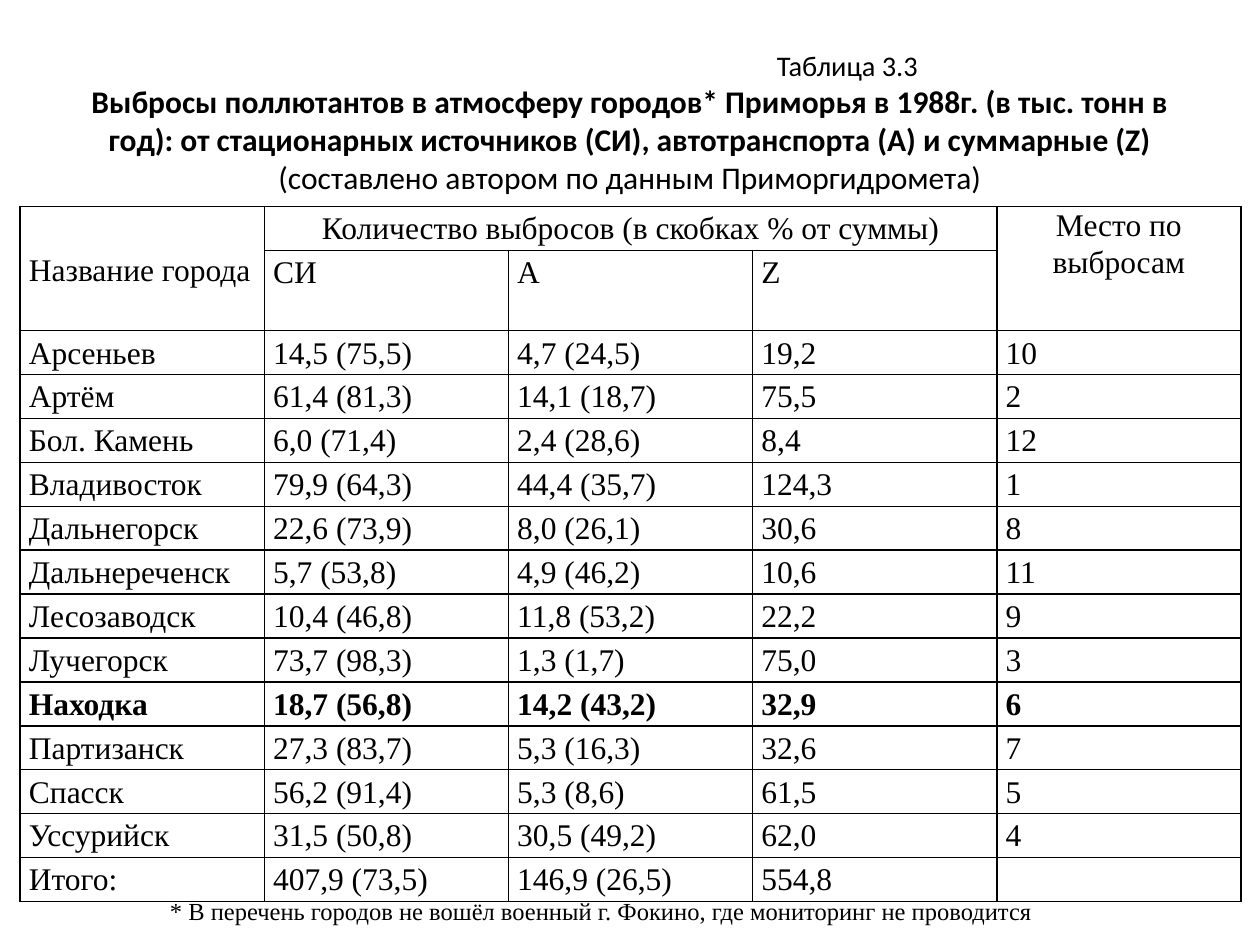
from dataclasses import dataclass

from lxml import etree
from pptx import Presentation
from pptx.dml.color import RGBColor
from pptx.enum.text import MSO_ANCHOR, PP_ALIGN
from pptx.oxml.ns import qn
from pptx.util import Emu, Inches, Pt

CENTER, JUSTIFY = PP_ALIGN.CENTER, PP_ALIGN.JUSTIFY
TOP, MIDDLE = MSO_ANCHOR.TOP, MSO_ANCHOR.MIDDLE
COLORS = {"ink": "000000"}
SANS, SERIF = "Calibri", "Times New Roman"
TABLE_LEFT, TABLE_TOP = 0.16, 1.64
TABLE_WIDTH, TABLE_HEIGHT = 9.69, 5.23
BORDER_WIDTH = Pt(1)


@dataclass
class Line:
    text: str
    size: float
    font: str
    bold: bool = False
    align: PP_ALIGN = CENTER
    margin: float = 0
    indent: float = 0


@dataclass
class Block:
    left: float
    top: float
    width: float
    height: float
    anchor: MSO_ANCHOR
    inset: float
    lines: list[Line]


@dataclass
class Heading:
    text: str
    row: int
    column: int
    rows: int = 1
    columns: int = 1
    align: PP_ALIGN = JUSTIFY
    anchor: MSO_ANCHOR = TOP
    spacing: float = 1.15


TITLE = Block(0.5, 0.3, 9, 1.25, TOP, 0.08, [
    Line("Таблица 3.3", 16.2, SANS, margin=3.45),
    Line("Выбросы поллютантов в атмосферу городов* Приморья в 1988г. "
         "(в тыс. тонн в год): от стационарных источников (СИ), "
         "автотранспорта (А) и суммарные (Z)", 18, SANS, bold=True),
    Line("(составлено автором по данным Приморгидромета)", 18, SANS),
])
FOOTNOTE = Block(0.7, 7.04, 8.52, 0.37, MIDDLE, 0.05, [
    Line("* В перечень городов не вошёл военный г. Фокино, "
         "где мониторинг не проводится", 14, SERIF, align=JUSTIFY, indent=0.55),
])

HEADINGS = [
    Heading("Название города", 0, 0, rows=2, anchor=MIDDLE),
    Heading("Количество выбросов (в скобках % от суммы)", 0, 1, columns=3, align=CENTER),
    Heading("Место по выбросам", 0, 4, rows=2, align=CENTER, spacing=1.06),
    Heading("СИ", 1, 1),
    Heading("А", 1, 2),
    Heading("Z", 1, 3),
]

CITIES = [
    ("Арсеньев", "14,5 (75,5)", "4,7 (24,5)", "19,2", "10"),
    ("Артём", "61,4 (81,3)", "14,1 (18,7)", "75,5", "2"),
    ("Бол. Камень", "6,0 (71,4)", "2,4 (28,6)", "8,4", "12"),
    ("Владивосток", "79,9 (64,3)", "44,4 (35,7)", "124,3", "1"),
    ("Дальнегорск", "22,6 (73,9)", "8,0 (26,1)", "30,6", "8"),
    ("Дальнереченск", "5,7 (53,8)", "4,9 (46,2)", "10,6", "11"),
    ("Лесозаводск", "10,4 (46,8)", "11,8 (53,2)", "22,2", "9"),
    ("Лучегорск", "73,7 (98,3)", "1,3 (1,7)", "75,0", "3"),
    ("Находка", "18,7 (56,8)", "14,2 (43,2)", "32,9", "6"),
    ("Партизанск", "27,3 (83,7)", "5,3 (16,3)", "32,6", "7"),
    ("Спасск", "56,2 (91,4)", "5,3 (8,6)", "61,5", "5"),
    ("Уссурийск", "31,5 (50,8)", "30,5 (49,2)", "62,0", "4"),
    ("Итого:", "407,9 (73,5)", "146,9 (26,5)", "554,8"),
]
HIGHLIGHTED_CITY = "Находка"
HEADING_ROWS = 2


def write_line(para, line: Line) -> None:
    para.alignment = line.align
    if line.margin or line.indent:
        properties = para._p.get_or_add_pPr()
        properties.set("marL", str(Inches(line.margin)))
        properties.set("indent", str(Inches(line.indent)))
    span = para.add_run()
    span.text = line.text
    span.font.name = line.font
    span.font.size = Pt(line.size)
    span.font.bold = line.bold
    span.font.color.rgb = RGBColor.from_string(COLORS["ink"])


def draw_block(page, block: Block) -> None:
    box = page.shapes.add_textbox(Inches(block.left), Inches(block.top),
                                  Inches(block.width), Inches(block.height))
    frame = box.text_frame
    frame.word_wrap = True
    frame.vertical_anchor = block.anchor
    frame.margin_top = frame.margin_bottom = Inches(block.inset)
    for index, line in enumerate(block.lines):
        para = frame.add_paragraph() if index else frame.paragraphs[0]
        write_line(para, line)


def style_cell(cell) -> None:
    cell.margin_left = cell.margin_right = Inches(0.07)
    cell.margin_top = cell.margin_bottom = Emu(0)
    properties = cell._tc.get_or_add_tcPr()
    for side in ("a:lnL", "a:lnR", "a:lnT", "a:lnB"):
        border = etree.SubElement(properties, qn(side), w=str(BORDER_WIDTH))
        fill = etree.SubElement(border, qn("a:solidFill"))
        etree.SubElement(fill, qn("a:srgbClr"), val=COLORS["ink"])
    cell.fill.background()


def write_cell(cell, text: str, align: PP_ALIGN = JUSTIFY,
               bold: bool = False, spacing: float = 1.15) -> None:
    para = cell.text_frame.paragraphs[0]
    para.line_spacing = spacing
    write_line(para, Line(text, 18, SERIF, bold, align))


def draw_table(page) -> None:
    row_count, column_count = HEADING_ROWS + len(CITIES), len(CITIES[0])
    table = page.shapes.add_table(
        row_count, column_count, Inches(TABLE_LEFT), Inches(TABLE_TOP),
        Inches(TABLE_WIDTH), Inches(TABLE_HEIGHT)).table
    table.first_row = table.horz_banding = False
    for cell in table.iter_cells():
        style_cell(cell)
    for heading in HEADINGS:
        cell = table.cell(heading.row, heading.column)
        if heading.rows * heading.columns > 1:
            cell.merge(table.cell(heading.row + heading.rows - 1,
                                  heading.column + heading.columns - 1))
        cell.vertical_anchor = heading.anchor
        write_cell(cell, heading.text, heading.align, spacing=heading.spacing)
    for row, city in enumerate(CITIES, HEADING_ROWS):
        for column, text in enumerate(city):
            write_cell(table.cell(row, column), text, bold=city[0] == HIGHLIGHTED_CITY)


def main() -> None:
    deck = Presentation()
    deck.slide_width, deck.slide_height = Inches(10), Inches(7.5)
    page = deck.slides.add_slide(deck.slide_layouts[6])
    draw_block(page, TITLE)
    draw_table(page)
    draw_block(page, FOOTNOTE)
    deck.save("out.pptx")


if __name__ == "__main__":
    main()
